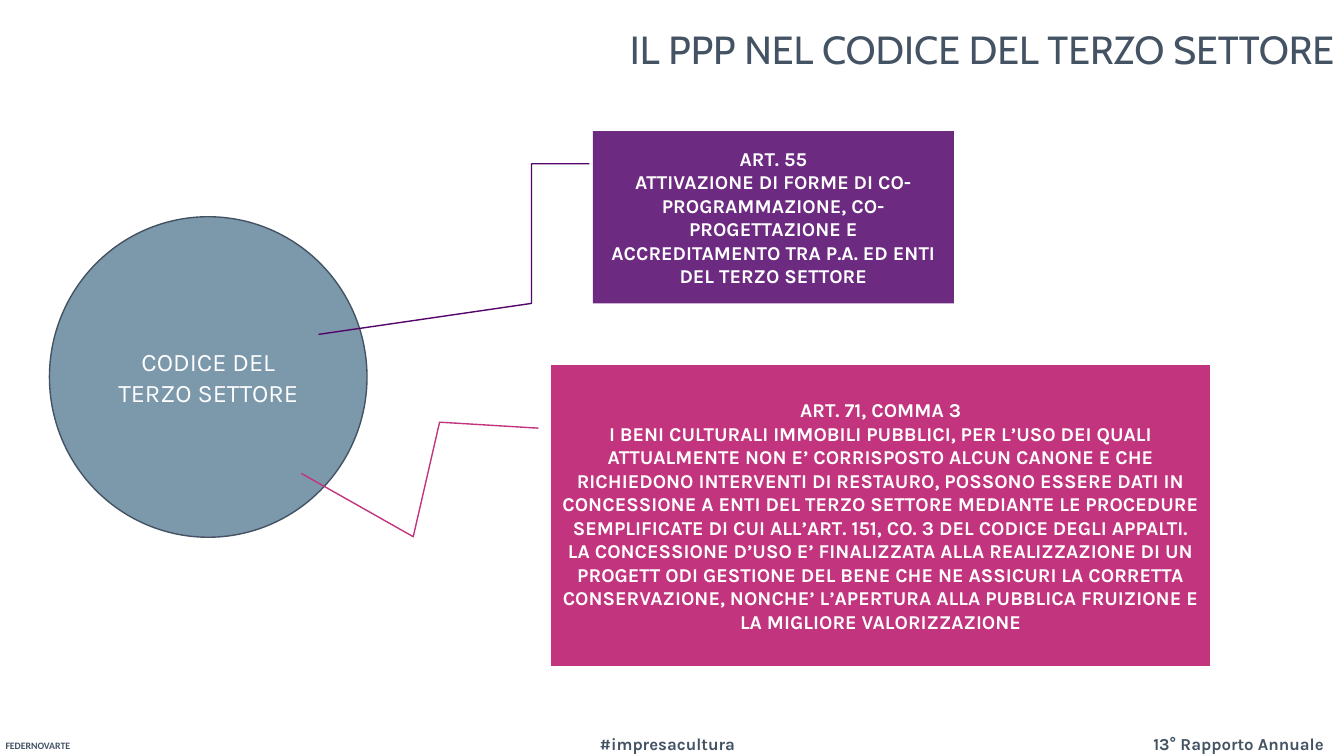
from lxml import etree
from pptx import Presentation
from pptx.dml.color import RGBColor
from pptx.enum.shapes import MSO_SHAPE as Shape
from pptx.enum.text import MSO_ANCHOR as Anchor, MSO_AUTO_SIZE as AutoSize, PP_ALIGN as Align
from pptx.oxml.ns import qn
from pptx.util import Inches, Pt

SLATE, WHITE = "445364", "FFFFFF"
PURPLE, MAGENTA, BLUE_GREY = "53056B", "C2347E", "7C98AB"

ARTICLE_55 = [
    "ART. 55",
    "ATTIVAZIONE DI FORME DI CO-PROGRAMMAZIONE, CO-PROGETTAZIONE E "
    "ACCREDITAMENTO TRA P.A. ED ENTI DEL TERZO SETTORE",
]
ARTICLE_71 = [
    "ART. 71, COMMA 3",
    "I BENI CULTURALI IMMOBILI PUBBLICI, PER L’USO DEI QUALI ATTUALMENTE NON E’ "
    "CORRISPOSTO ALCUN CANONE E CHE RICHIEDONO INTERVENTI DI RESTAURO, POSSONO "
    "ESSERE DATI IN CONCESSIONE A ENTI DEL TERZO SETTORE MEDIANTE LE PROCEDURE "
    "SEMPLIFICATE DI CUI ALL’ART. 151, CO. 3 DEL CODICE DEGLI APPALTI. LA "
    "CONCESSIONE D’USO E’ FINALIZZATA ALLA REALIZZAZIONE DI UN PROGETT ODI "
    "GESTIONE DEL BENE CHE NE ASSICURI LA CORRETTA CONSERVAZIONE, NONCHE’ "
    "L’APERTURA ALLA PUBBLICA FRUIZIONE E LA MIGLIORE VALORIZZAZIONE",
]


def rgb(value):
    """Turn a hex string into a colour."""
    return RGBColor.from_string(value)


def write(frame, lines, size, name="Karla", color=WHITE, bold=False, align=Align.CENTER):
    """Fill a text frame with one formatted paragraph per line."""
    for index, line in enumerate(lines):
        para = frame.add_paragraph() if index else frame.paragraphs[0]
        para.alignment = align
        span = para.add_run()
        span.text = line
        for key, value in {"size": Pt(size), "name": name, "bold": bold}.items():
            setattr(span.font, key, value)
        span.font.color.rgb = rgb(color)


def add_title(page, text, place):
    """Place and format the slide title."""
    title = page.shapes.title
    for key, value in zip(("left", "top", "width", "height"), place):
        setattr(title, key, Inches(value))
    frame = title.text_frame
    settings = {"word_wrap": True, "auto_size": AutoSize.NONE, "vertical_anchor": Anchor.MIDDLE}
    for key, value in settings.items():
        setattr(frame, key, value)
    write(frame, [text], 28, "Cabin", SLATE, align=Align.RIGHT)
    frame.paragraphs[0].line_spacing = 0.9


def add_footer(page, text, place, wrap=False, **style):
    """Add a bold footer label."""
    box = page.shapes.add_textbox(*map(Inches, place))
    box.text_frame.word_wrap = wrap
    write(box.text_frame, [text], color=SLATE, bold=True, **style)


def add_panel(page, kind, place, fill, line, lines, size, bold=False):
    """Add a filled shape with centred text."""
    panel = page.shapes.add_shape(kind, *map(Inches, place))
    panel.shadow.inherit = False
    panel.fill.solid()
    panel.fill.fore_color.rgb = rgb(fill)
    panel.line.color.rgb = rgb(line)
    panel.line.width = Pt(1)
    panel.text_frame.word_wrap = True
    panel.text_frame.vertical_anchor = Anchor.MIDDLE
    write(panel.text_frame, lines, size, bold=bold)
    return panel


def add_callout(page, place, color, lines, leader):
    """Add a callout whose leader line follows the given adjustments."""
    callout = add_panel(page, Shape.LINE_CALLOUT_3_NO_BORDER, place, color, color, lines, 14, True)
    for index, value in enumerate(leader):
        callout.adjustments[index] = value
    return callout


def set_opacity(shape, percent):
    """Make a solid fill partly transparent."""
    color = shape.fill._xPr.find(qn("a:solidFill"))[0]
    etree.SubElement(color, qn("a:alpha")).set("val", str(percent * 1000))


def main():
    """Build the slide and save it."""
    deck = Presentation()
    deck.slide_width, deck.slide_height = Inches(13.33), Inches(7.5)
    page = deck.slides.add_slide(deck.slide_layouts[5])

    add_footer(page, "FEDERNOVARTE", (-0.1, 7.29, 0.95, 0.22), wrap=True, size=7, name="Calibri")
    add_footer(page, "13° Rapporto Annuale", (11.34, 7.23, 2.05, 0.3), size=12, align=Align.LEFT)
    add_footer(page, "#impresacultura", (5.85, 7.23, 1.63, 0.3), size=12, align=Align.LEFT)
    add_title(page, "IL PPP NEL CODICE DEL TERZO SETTORE", (1.83, 0.08, 11.5, 0.87))

    add_panel(page, Shape.OVAL, (0.49, 2.15, 3.15, 3.18), BLUE_GREY, SLATE,
              ["CODICE DEL TERZO SETTORE"], 18)
    article_55 = add_callout(page, (5.88, 1.3, 3.58, 1.71), PURPLE, ARTICLE_55,
                             (0.19, -0.01, 0.19, -0.17, 1, -0.17, 1.18, -0.76))
    set_opacity(article_55, 85)
    add_callout(page, (5.47, 3.62, 6.53, 2.99), MAGENTA, ARTICLE_71,
                (0.21, -0.02, 0.19, -0.17, 0.57, -0.21, 0.36, -0.38))

    deck.save("out.pptx")


if __name__ == "__main__":
    main()
